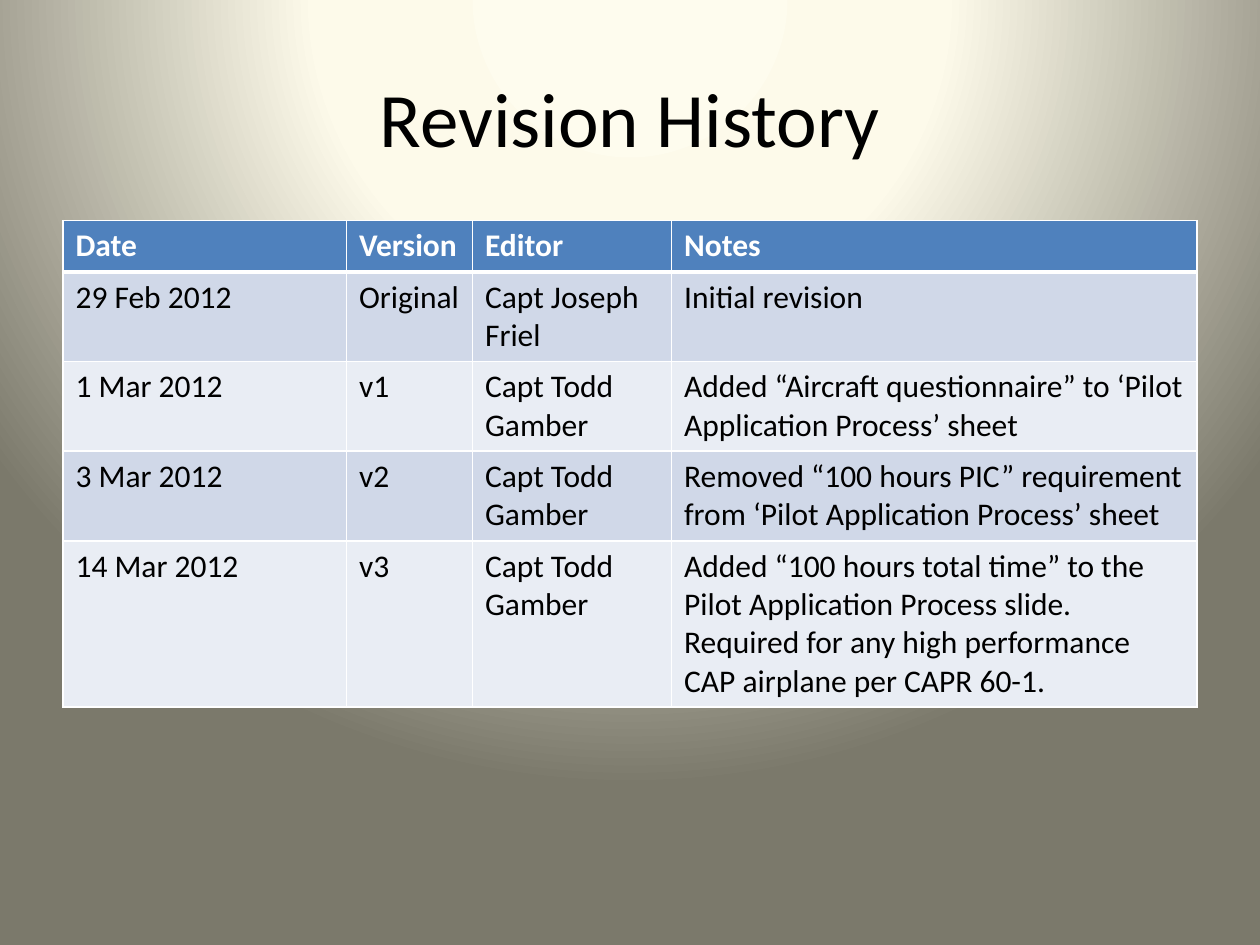
from pptx import Presentation
from pptx.dml.color import RGBColor
from pptx.enum.text import MSO_ANCHOR, PP_ALIGN
from pptx.oxml import parse_xml
from pptx.oxml.ns import nsdecls, qn
from pptx.util import Inches, Pt

CENTER = PP_ALIGN.CENTER
MIDDLE = MSO_ANCHOR.MIDDLE
TITLE_ONLY = 5

BACKGROUND_STOPS = [(0, "FEFCEE"), (40, "FDFAEA"), (100, "7B796B")]
BLACK = "000000"
WHITE = "FFFFFF"
HEADER_FILL = "4F81BD"
BAND_FILLS = ["E9EDF4", "D0D8E8"]

TITLE_FORMAT = {"name": "Calibri", "size": Pt(44), "bold": False}
HEADER_FORMAT = {"name": "Calibri", "size": Pt(18), "bold": True}
BODY_FORMAT = {**HEADER_FORMAT, "bold": False}

COLUMN_WIDTHS = [2.25, 1, 1.58, 4.17]
ROW_HEIGHT = 0.41
REVISIONS = [
    ("Date", "Version", "Editor", "Notes"),
    ("29 Feb 2012", "Original", "Capt Joseph Friel", "Initial revision"),
    ("1 Mar 2012", "v1", "Capt Todd Gamber",
     "Added “Aircraft questionnaire” to ‘Pilot Application Process’ sheet"),
    ("3 Mar 2012", "v2", "Capt Todd Gamber",
     "Removed “100 hours PIC” requirement from ‘Pilot Application Process’ sheet"),
    ("14 Mar 2012", "v3", "Capt Todd Gamber",
     "Added “100 hours total time” to the Pilot Application Process slide. "
     "Required for any high performance CAP airplane per CAPR 60-1."),
]


def color(value):
    return RGBColor.from_string(value)


def format_font(font, values, font_color):
    for name, value in values.items():
        setattr(font, name, value)
    font.color.rgb = color(font_color)


def set_background(slide):
    slide.background.fill.gradient()
    gradient = slide.element.find(".//" + qn("a:gradFill"))
    stops = "".join(
        f'<a:gs pos="{position * 1000}"><a:srgbClr val="{value}"/></a:gs>'
        for position, value in BACKGROUND_STOPS
    )
    radial = parse_xml(
        f'<a:gradFill {nsdecls("a")} rotWithShape="1"><a:gsLst>{stops}</a:gsLst>'
        '<a:path path="circle">'
        '<a:fillToRect l="50000" t="-80000" r="50000" b="180000"/>'
        '</a:path></a:gradFill>'
    )
    gradient.getparent().replace(gradient, radial)


def set_title(slide, text):
    title = slide.shapes.title
    title.left, title.top = Inches(0.5), Inches(0.3)
    title.width, title.height = Inches(9), Inches(1.25)
    title.text_frame.text = text
    title.text_frame.vertical_anchor = MIDDLE
    paragraph = title.text_frame.paragraphs[0]
    paragraph.alignment = CENTER
    format_font(paragraph.runs[0].font, TITLE_FORMAT, BLACK)


def set_borders(cell, bottom_width):
    properties = cell._tc.get_or_add_tcPr()
    for side, width in (("L", 1), ("R", 1), ("T", 1), ("B", bottom_width)):
        properties.append(parse_xml(
            f'<a:ln{side} {nsdecls("a")} w="{Pt(width)}"><a:solidFill>'
            f'<a:srgbClr val="{WHITE}"/></a:solidFill></a:ln{side}>'
        ))


def fill_cell(cell, text, row_index):
    is_header = row_index == 0
    cell.text = text
    set_borders(cell, 3 if is_header else 1)
    cell.fill.solid()
    cell.fill.fore_color.rgb = color(HEADER_FILL if is_header else BAND_FILLS[row_index % 2])
    format_font(
        cell.text_frame.paragraphs[0].runs[0].font,
        HEADER_FORMAT if is_header else BODY_FORMAT,
        WHITE if is_header else BLACK,
    )


def add_revision_table(slide):
    table = slide.shapes.add_table(
        len(REVISIONS), len(COLUMN_WIDTHS), Inches(0.5), Inches(1.75),
        Inches(sum(COLUMN_WIDTHS)), Inches(ROW_HEIGHT * len(REVISIONS)),
    ).table
    for column, width in zip(table.columns, COLUMN_WIDTHS):
        column.width = Inches(width)
    for row_index, revision in enumerate(REVISIONS):
        table.rows[row_index].height = Inches(ROW_HEIGHT)
        for column_index, text in enumerate(revision):
            fill_cell(table.cell(row_index, column_index), text, row_index)


def main():
    presentation = Presentation()
    presentation.slide_width = Inches(10)
    presentation.slide_height = Inches(7.5)
    slide = presentation.slides.add_slide(presentation.slide_layouts[TITLE_ONLY])
    set_background(slide)
    set_title(slide, "Revision History")
    add_revision_table(slide)
    presentation.save("out.pptx")


if __name__ == "__main__":
    main()
